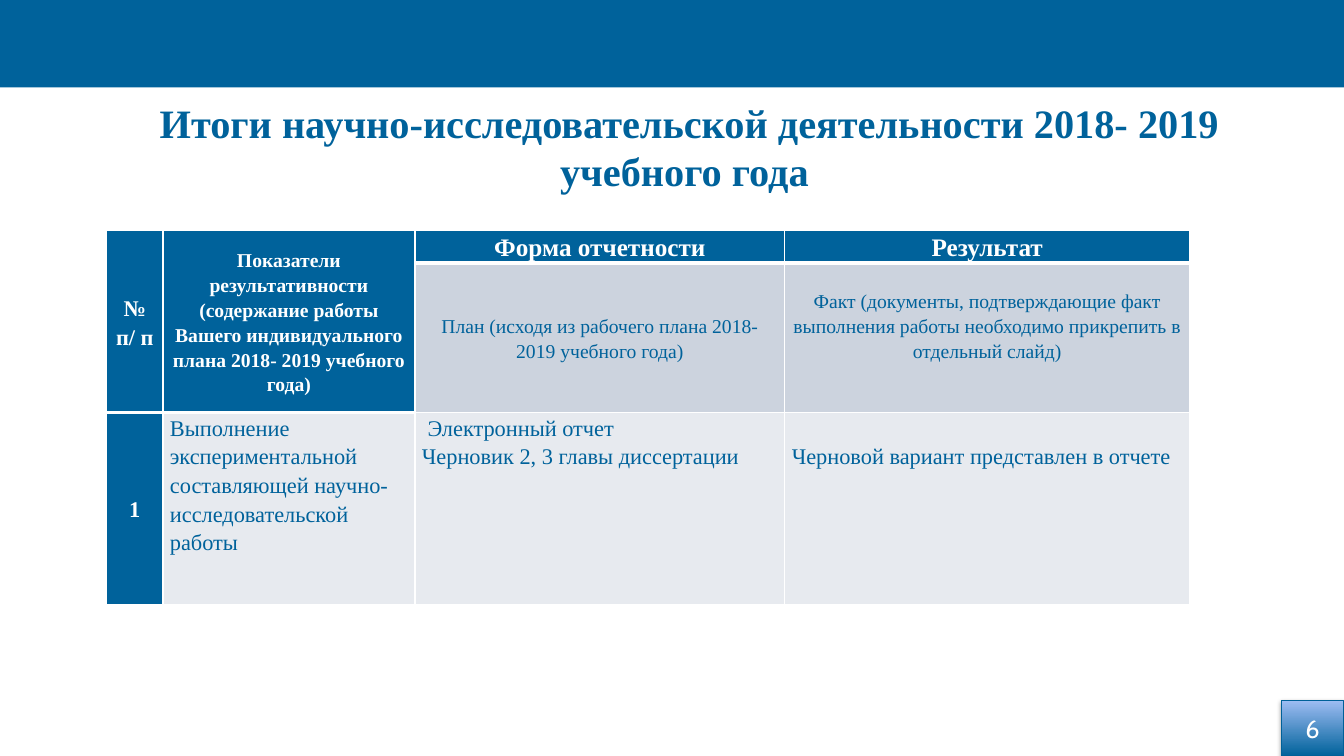
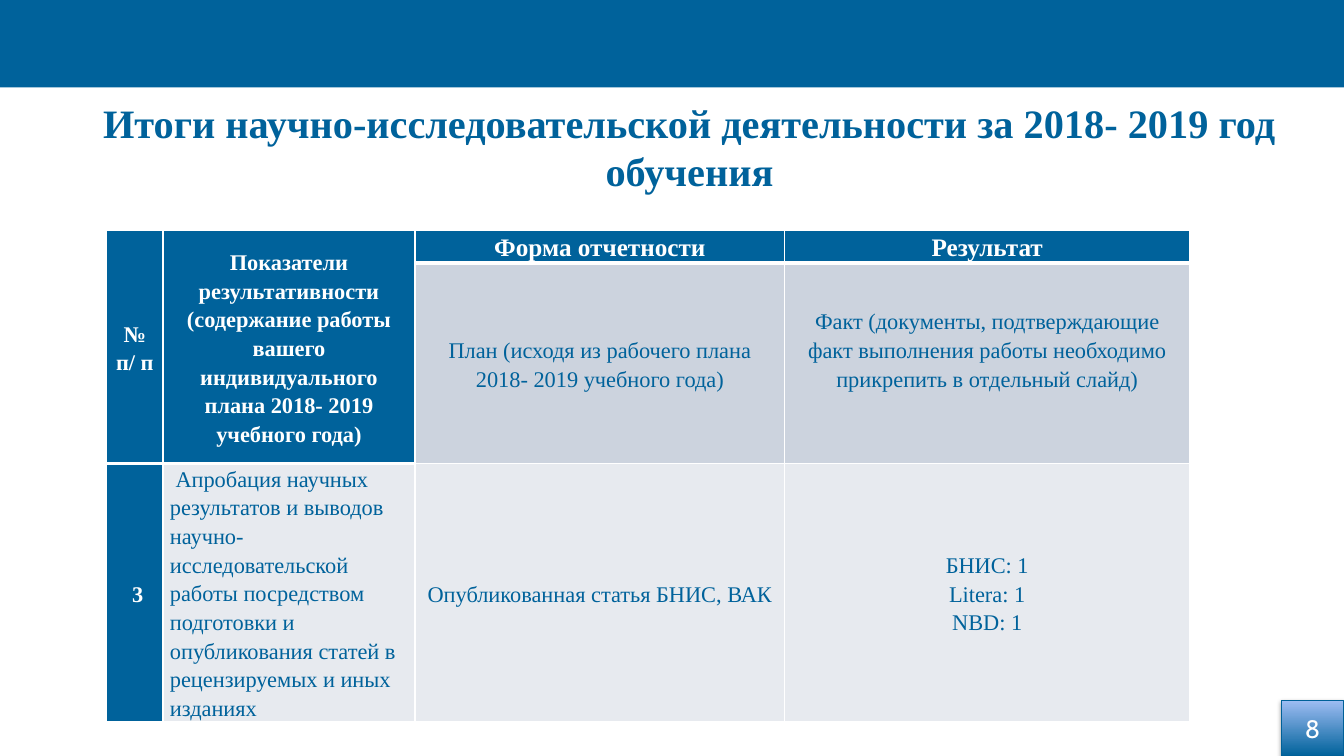
from pptx import Presentation
from pptx.dml.color import RGBColor
from pptx.enum.shapes import MSO_SHAPE as SHAPE
from pptx.enum.text import MSO_ANCHOR as ANCHOR, PP_ALIGN as ALIGN
from pptx.oxml import parse_xml
from pptx.oxml.ns import nsdecls
from pptx.util import Pt

WIDTH, HEIGHT = 960, 540
BLUE, WHITE = "00629B", "FFFFFF"
PLAN_GREY, BODY_GREY = "CCD3DE", "E7EAEF"
SKY, EDGE = "9FBDF3", "006098"
SERIF, SANS = "Times New Roman", "Cabin"

BAND_BOX = (0, 0, WIDTH, 62.5)
TITLE_BOX = (60.5, 72, 864, 65)
TABLE_POS = (76.2, 164.5)
NUMBER_BOX = (915.2, 500.2, 44.8, 39.8)
COLUMNS = (40.2, 180, 264.2, 289.2)
CAPTION_HEIGHT = 23.6
NBSP_WIDTH = 4

HEADER = {"fill": BLUE, "color": WHITE, "bold": True, "size": 16,
          "align": ALIGN.CENTER, "anchor": ANCHOR.MIDDLE}
CAPTION = {**HEADER, "size": 18, "anchor": ANCHOR.TOP}
PLAN = {**HEADER, "fill": PLAN_GREY, "color": BLUE, "bold": False}
BODY = {**PLAN, "fill": BODY_GREY, "align": ALIGN.LEFT, "anchor": ANCHOR.TOP}
BODY_CENTRED = {**BODY, "align": ALIGN.CENTER, "anchor": ANCHOR.MIDDLE}

PLAN_TEXT = "План (исходя из рабочего плана 2018- 2019 учебного года)"
FACT_TEXT = ("Факт (документы, подтверждающие факт выполнения работы "
             "необходимо прикрепить в отдельный слайд)")

RESULTS = [
    {
        "title": "Итоги научно-исследовательской деятельности 2018- 2019 учебного года ",
        "number": "6",
        "heights": (105.8, 137),
        "sizes": {"indicators": 14, "plan": 14},
        "whose": "Вашего",
        "body": [
            (["1"], HEADER),
            (["Выполнение экспериментальной составляющей "
              "научно-исследовательской работы"], BODY),
            (["Электронный отчет", "Черновик 2, 3 главы диссертации"],
             {**BODY, "indent": NBSP_WIDTH}),
            (["Черновой вариант представлен в отчете"], {**BODY, "top": 20.4}),
        ],
    },
    {
        "title": "Итоги научно-исследовательской деятельности за 2018- 2019 год обучения",
        "number": "8",
        "heights": (142, 184.2),
        "sizes": {"indicators": 16, "plan": 16},
        "whose": "вашего",
        "body": [
            (["3"], {**HEADER, "indent": NBSP_WIDTH}),
            (["Апробация научных результатов и выводов научно-исследовательской "
              "работы посредством подготовки и опубликования статей в "
              "рецензируемых и иных изданиях"], {**BODY, "indent": NBSP_WIDTH}),
            (["Опубликованная статья БНИС, ВАК"], BODY_CENTRED),
            (["БНИС: 1", "Litera: 1", "NBD: 1"], BODY_CENTRED),
        ],
    },
]


def rgb(hex_color):
    return RGBColor.from_string(hex_color)


def points(values):
    return [Pt(value) for value in values]


def format_font(font, color, **values):
    font.color.rgb = rgb(color)
    for name, value in values.items():
        setattr(font, name, value)


def add_master_band(prs, slide):
    """Draw the top band and move it to the master, behind everything."""
    band = slide.shapes.add_shape(SHAPE.RECTANGLE, *points(BAND_BOX))
    band.shadow.inherit = False
    band.fill.solid()
    band.fill.fore_color.rgb = rgb(BLUE)
    band.line.fill.background()
    prs.slide_master.shapes.element.insert(2, band.element)


def fill_title(title, text, box):
    title.left, title.top, title.width, title.height = points(box)
    frame = title.text_frame
    frame.text = text
    frame.word_wrap = True
    frame.vertical_anchor = ANCHOR.MIDDLE
    heading = frame.paragraphs[0]
    heading.alignment = ALIGN.CENTER
    format_font(heading.runs[0].font, BLUE, name=SERIF, size=Pt(28.8), bold=True)


def set_borders(cell, widths):
    """Put white lines on the sides in widths, given in the order L, R, T, B."""
    properties = cell._tc.get_or_add_tcPr()
    for place, (side, width) in enumerate(widths.items()):
        properties.insert(place, parse_xml(
            f'<a:ln{side} {nsdecls("a")} w="{Pt(width)}"><a:solidFill>'
            f'<a:srgbClr val="{WHITE}"/></a:solidFill></a:ln{side}>'))


def fill_cell(cell, lines, look):
    cell.fill.solid()
    cell.fill.fore_color.rgb = rgb(look["fill"])
    margins = {"left": 5, "right": 5, "top": look.get("top", 0),
               "bottom": look.get("bottom", 0)}
    for side, margin in margins.items():
        setattr(cell, f"margin_{side}", Pt(margin))
    cell.vertical_anchor = look["anchor"]
    cell.text_frame.text = "\n".join(lines)
    for place, paragraph in enumerate(cell.text_frame.paragraphs):
        paragraph.alignment = look["align"]
        paragraph.line_spacing = 1.15
        if place == 0 and "indent" in look:
            paragraph._p.get_or_add_pPr().set("indent", str(Pt(look["indent"])))
        for run in paragraph.runs:
            format_font(run.font, look["color"], name=SERIF,
                        size=Pt(look["size"]), bold=look["bold"])


def add_results_table(slide, result, left, top):
    heights = (CAPTION_HEIGHT, *result["heights"])
    box = (left, top, sum(COLUMNS), sum(heights))
    table = slide.shapes.add_table(len(heights), len(COLUMNS), *points(box)).table
    for column, width in zip(table.columns, COLUMNS):
        column.width = Pt(width)
    for row, height in zip(table.rows, heights):
        row.height = Pt(height)
    for column in (0, 1):
        table.cell(0, column).merge(table.cell(1, column))

    plan = {**PLAN, "size": result["sizes"]["plan"]}
    indicators = ["Показатели результативности",
                  f"(содержание работы {result['whose']} индивидуального "
                  "плана 2018- 2019 учебного года)"]
    contents = [
        [(["№ п/ п"], HEADER),
         (indicators, {**HEADER, "size": result["sizes"]["indicators"]}),
         (["Форма отчетности"], CAPTION),
         (["Результат"], CAPTION)],
        [([], HEADER), ([], HEADER),
         ([PLAN_TEXT], plan),
         ([FACT_TEXT], {**plan, "bottom": 1.28 * plan["size"]})],
        result["body"],
    ]
    for row, row_contents in enumerate(contents):
        for column, (lines, look) in enumerate(row_contents):
            cell = table.cell(row, column)
            if not cell.is_spanned:
                fill_cell(cell, lines, look)
            under_header = row == 0 or (row == 1 and column < 2)
            sides = {"L": 1, "R": 1, "T": 1, "B": 3 if under_header else 1}
            if row:
                del sides["T"]
            set_borders(cell, sides)


def add_number_box(slide, number, box):
    tile = slide.shapes.add_shape(SHAPE.RECTANGLE, *points(box))
    tile.fill.gradient()
    tile.fill.gradient_angle = 90
    for stop, color in zip(tile.fill.gradient_stops, (BLUE, SKY)):
        stop.color.rgb = rgb(color)
    tile.line.color.rgb = rgb(EDGE)
    tile.line.width = Pt(0.75)
    tile.shadow.inherit = False
    tile.element.spPr.find("{*}effectLst").append(parse_xml(
        f'<a:outerShdw {nsdecls("a")} blurRad="{Pt(3.1)}" dist="{Pt(1.8)}" '
        'dir="5400000" rotWithShape="0"><a:srgbClr val="000000">'
        '<a:alpha val="35000"/></a:srgbClr></a:outerShdw>'))
    frame = tile.text_frame
    frame.text = number
    frame.vertical_anchor = ANCHOR.MIDDLE
    frame.paragraphs[0].alignment = ALIGN.CENTER
    format_font(frame.paragraphs[0].runs[0].font, WHITE, name=SANS, size=Pt(18))


def add_results_slide(prs, result):
    title_only = prs.slide_layouts[5]
    slide = prs.slides.add_slide(title_only)
    fill_title(slide.shapes.title, result["title"], TITLE_BOX)
    add_results_table(slide, result, *TABLE_POS)
    add_number_box(slide, result["number"], NUMBER_BOX)
    return slide


def main():
    prs = Presentation()
    prs.slide_width, prs.slide_height = points((WIDTH, HEIGHT))
    slides = [add_results_slide(prs, result) for result in RESULTS]
    add_master_band(prs, slides[0])
    prs.save("out.pptx")


if __name__ == "__main__":
    main()
